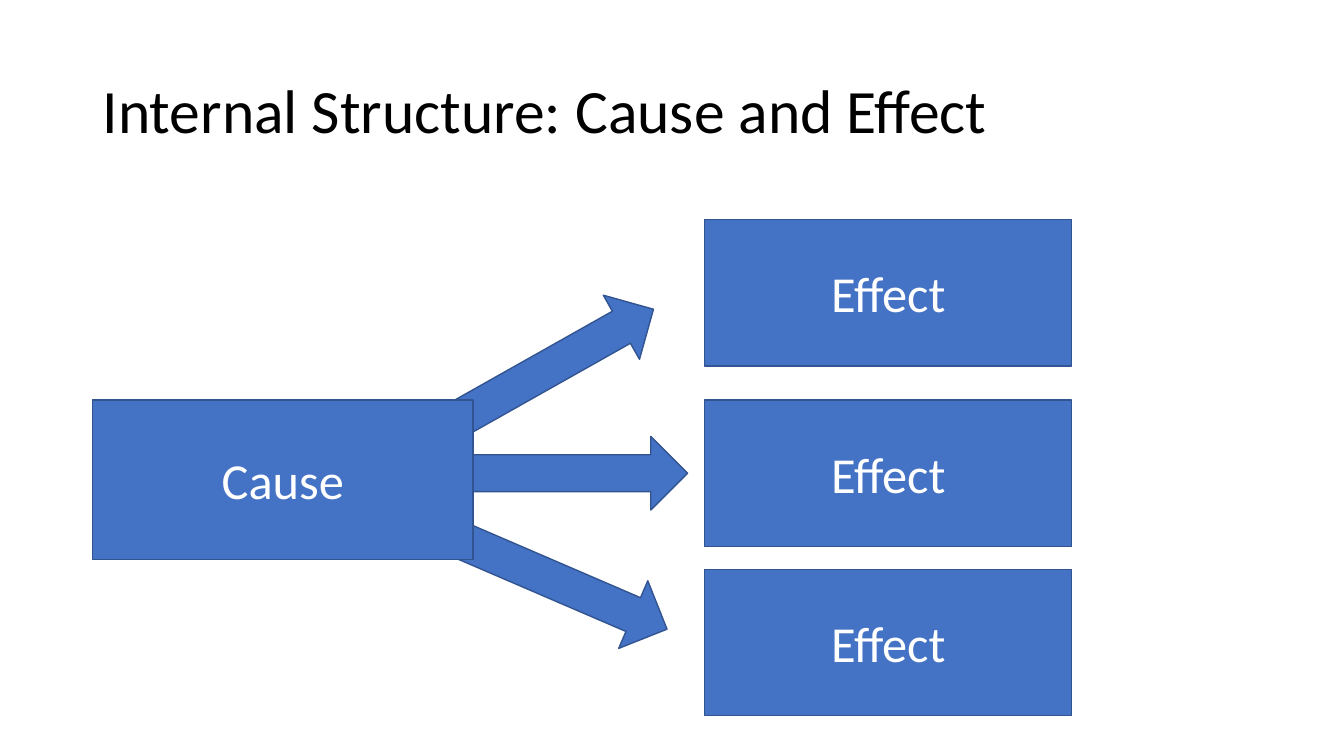
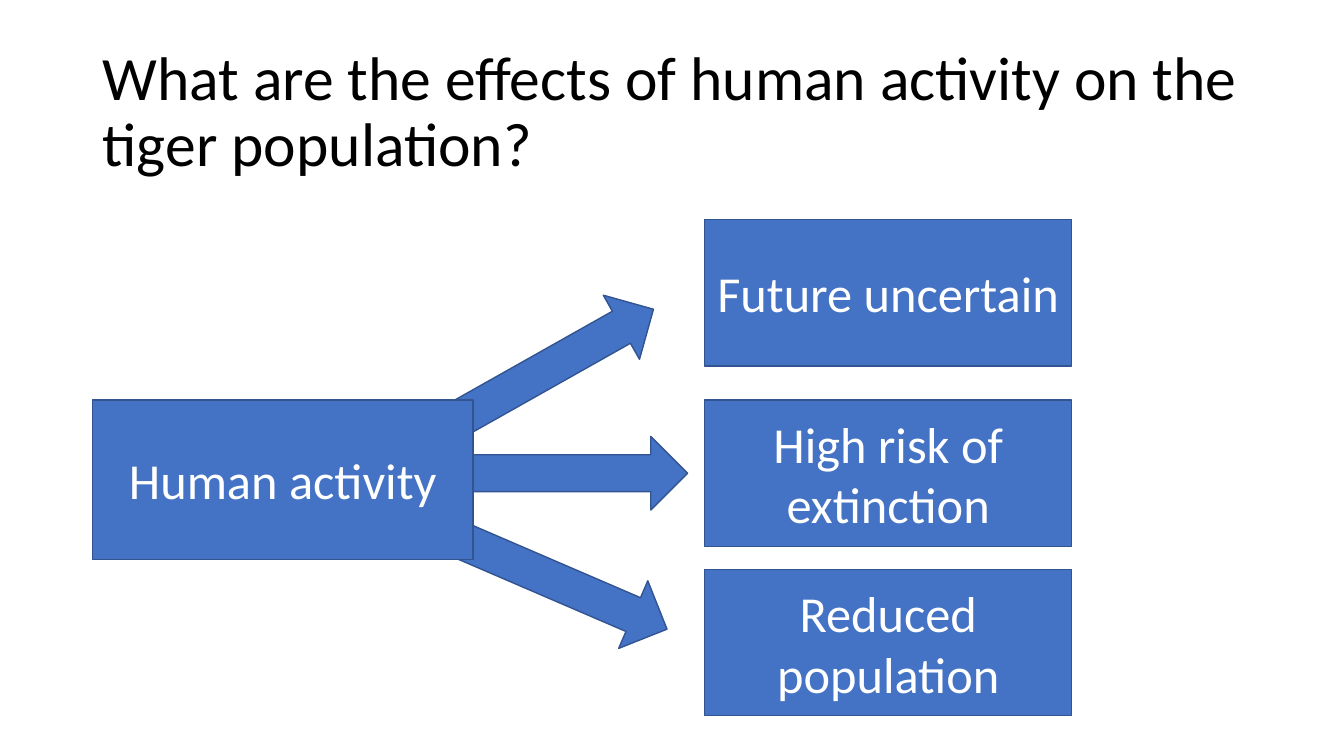
from pptx import Presentation
from pptx.dml.color import RGBColor
from pptx.enum.shapes import MSO_SHAPE
from pptx.enum.text import MSO_ANCHOR, PP_ALIGN
from pptx.util import Inches, Pt

COLORS = {"title": "000000", "fill": "4472C4", "outline": "325491", "label": "FFFFFF"}
FONT = "Calibri"

# Layout in inches
TITLE_BOX = (0.92, 0.4, 11.5, 1.45)
CAUSE_BOX = (0.92, 3.97, 3.77, 1.58)
EFFECT_LEFT, EFFECT_SIZE = 6.99, (3.64, 1.45)
EFFECT_TOPS = (2.18, 3.97, 5.65)
ARROW_SIZE = (2.31, 0.73)
ARROWS = ((4.51, 4.33, 0), (4.32, 3.27, 330.6), (4.4, 5.42, 23.3))  # left, top, rotation

# Title, cause, effects from top to bottom
DIAGRAMS = (
    ("Internal Structure: Cause and Effect", "Cause", ("Effect",) * 3),
    (
        "What are the effects of human activity on the tiger population?",
        "Human activity",
        ("Future uncertain", "High risk of extinction", "Reduced population"),
    ),
)


class Deck:
    """Holds the shared style and the current slide."""

    def __init__(self):
        self.presentation = Presentation()
        self.presentation.slide_width = Inches(13.33)
        self.presentation.slide_height = Inches(7.5)
        self.slide = None

    def color(self, name):
        return RGBColor.from_string(COLORS[name])

    def new_slide(self):
        blank = self.presentation.slide_layouts[6]
        self.slide = self.presentation.slides.add_slide(blank)

    def add_text(self, frame, text, size, color, align):
        frame.word_wrap = True
        frame.vertical_anchor = MSO_ANCHOR.MIDDLE
        paragraph = frame.paragraphs[0]
        paragraph.alignment = align
        run = paragraph.add_run()
        run.text = text
        run.font.name = FONT
        run.font.size = Pt(size)
        run.font.color.rgb = self.color(color)
        return paragraph

    def title(self, text):
        box = self.slide.shapes.add_textbox(*map(Inches, TITLE_BOX))
        paragraph = self.add_text(box.text_frame, text, 44, "title", PP_ALIGN.LEFT)
        paragraph.line_spacing = 0.9

    def block(self, preset, bounds):
        shape = self.slide.shapes.add_shape(preset, *map(Inches, bounds))
        shape.shadow.inherit = False
        shape.fill.solid()
        shape.fill.fore_color.rgb = self.color("fill")
        shape.line.color.rgb = self.color("outline")
        shape.line.width = Pt(1)
        return shape

    def box(self, text, bounds):
        shape = self.block(MSO_SHAPE.RECTANGLE, bounds)
        self.add_text(shape.text_frame, text, 36, "label", PP_ALIGN.CENTER)

    def arrow(self, left, top, rotation):
        shape = self.block(MSO_SHAPE.RIGHT_ARROW, (left, top, *ARROW_SIZE))
        shape.rotation = rotation


def main():
    deck = Deck()
    for title, cause, effects in DIAGRAMS:
        deck.new_slide()
        deck.title(title)
        for effect, top in zip(effects, EFFECT_TOPS):
            deck.box(effect, (EFFECT_LEFT, top, *EFFECT_SIZE))
        # The cause box comes last so that it covers the arrow tails
        for arrow in ARROWS:
            deck.arrow(*arrow)
        deck.box(cause, CAUSE_BOX)
    deck.presentation.save("out.pptx")


if __name__ == "__main__":
    main()
